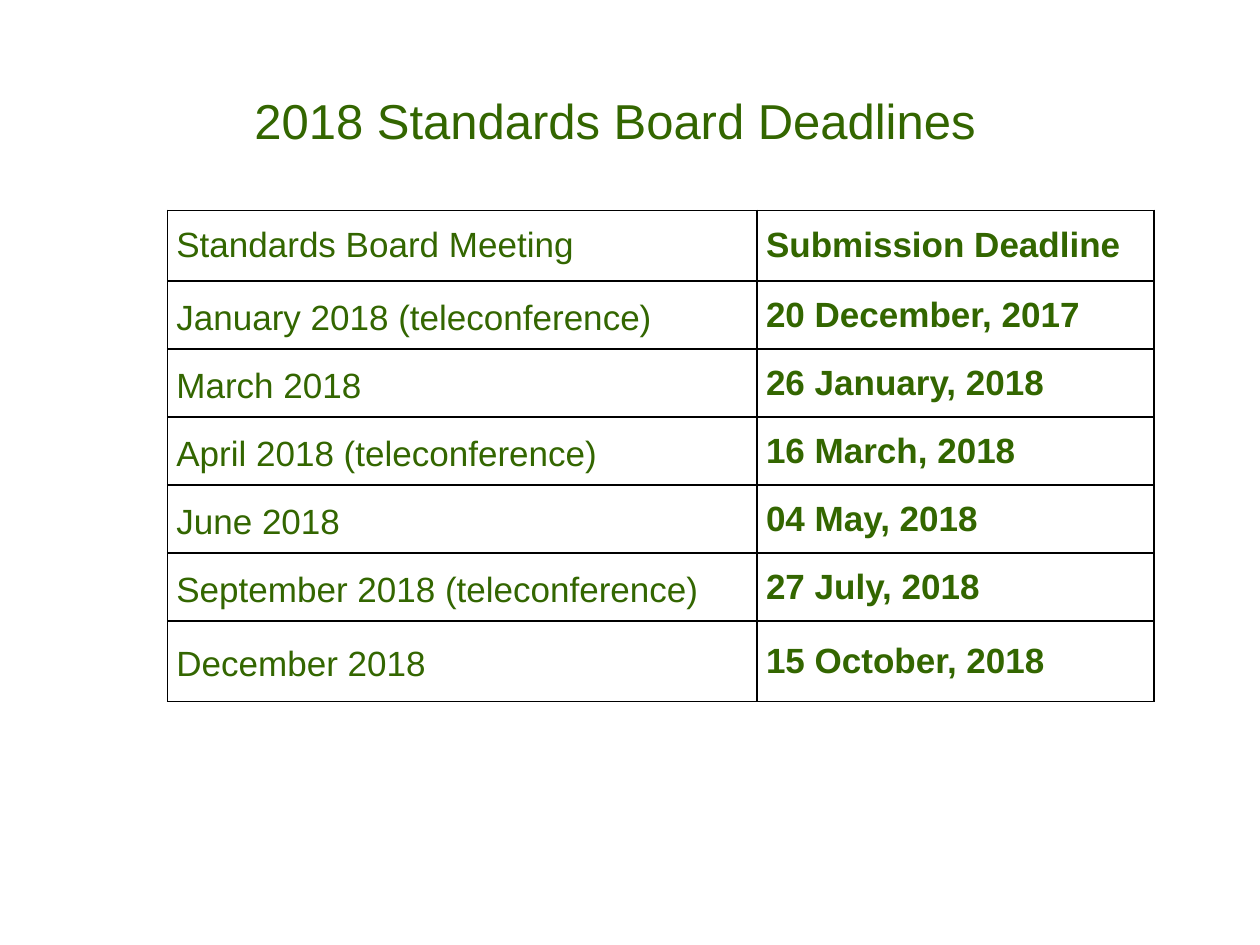
from lxml import etree
from pptx import Presentation
from pptx.dml.color import RGBColor
from pptx.enum import text
from pptx.oxml import ns
from pptx.util import Inches, Pt

GREEN = "336600"
BLACK = "000000"
COLUMN_WIDTHS = [4.68, 3.15]
ROW_HEIGHTS = [0.56] + [0.54] * 5 + [0.64]
DEADLINES = [
    ("Standards Board Meeting", "Submission Deadline"),
    ("January 2018 (teleconference)", "20 December, 2017"),
    ("March 2018", "26 January, 2018"),
    ("April 2018 (teleconference)", "16 March, 2018"),
    ("June 2018", "04 May, 2018"),
    ("September 2018 (teleconference)", "27 July, 2018"),
    ("December 2018", "15 October, 2018"),
]


def color(hex_value):
    return RGBColor.from_string(hex_value)


def add_run(paragraph, wording, size, bold=False):
    run = paragraph.add_run()
    run.text = wording
    run.font.name = "Arial"
    run.font.size = Pt(size)
    run.font.bold = bold
    run.font.color.rgb = color(GREEN)


def add_title(slide, wording):
    title = slide.shapes.add_textbox(Inches(0.92), Inches(0.58), Inches(7.92), Inches(0.75))
    frame = title.text_frame
    frame.word_wrap = True
    frame.vertical_anchor = text.MSO_ANCHOR.MIDDLE
    heading = frame.paragraphs[0]
    heading.alignment = text.PP_ALIGN.CENTER
    add_run(heading, wording, 28)


def set_borders(cell, hex_value, width):
    properties = cell._tc.get_or_add_tcPr()
    for side in ("a:lnL", "a:lnR", "a:lnT", "a:lnB"):
        line = etree.SubElement(properties, ns.qn(side), w=str(Pt(width)))
        fill = etree.SubElement(line, ns.qn("a:solidFill"))
        etree.SubElement(fill, ns.qn("a:srgbClr"), val=hex_value)


def fill_cell(cell, wording, bold, line_spacing):
    cell.margin_left = cell.margin_right = Inches(0.07)
    cell.margin_top = cell.margin_bottom = 0
    cell.vertical_anchor = text.MSO_ANCHOR.MIDDLE
    set_borders(cell, BLACK, 1)
    cell.fill.background()
    paragraph = cell.text_frame.paragraphs[0]
    paragraph.line_spacing = line_spacing
    add_run(paragraph, wording, 20, bold)


def add_deadline_table(slide):
    frame = slide.shapes.add_table(
        len(ROW_HEIGHTS), len(COLUMN_WIDTHS), Inches(1.33), Inches(1.67),
        Inches(sum(COLUMN_WIDTHS)), Inches(sum(ROW_HEIGHTS)))
    table = frame.table
    table.first_row = table.horz_banding = False
    for column, width in zip(table.columns, COLUMN_WIDTHS):
        column.width = Inches(width)
    for index, (height, (meeting, deadline)) in enumerate(zip(ROW_HEIGHTS, DEADLINES)):
        table.rows[index].height = Inches(height)
        fill_cell(table.cell(index, 0), meeting, False, 1.15 if index else 1.0)
        fill_cell(table.cell(index, 1), deadline, True, 1.0)


def main():
    deck = Presentation()
    deck.slide_width, deck.slide_height = Inches(10), Inches(7.5)
    slide = deck.slides.add_slide(deck.slide_layouts[6])
    add_title(slide, "2018 Standards Board Deadlines")
    add_deadline_table(slide)
    deck.save("out.pptx")


if __name__ == "__main__":
    main()
